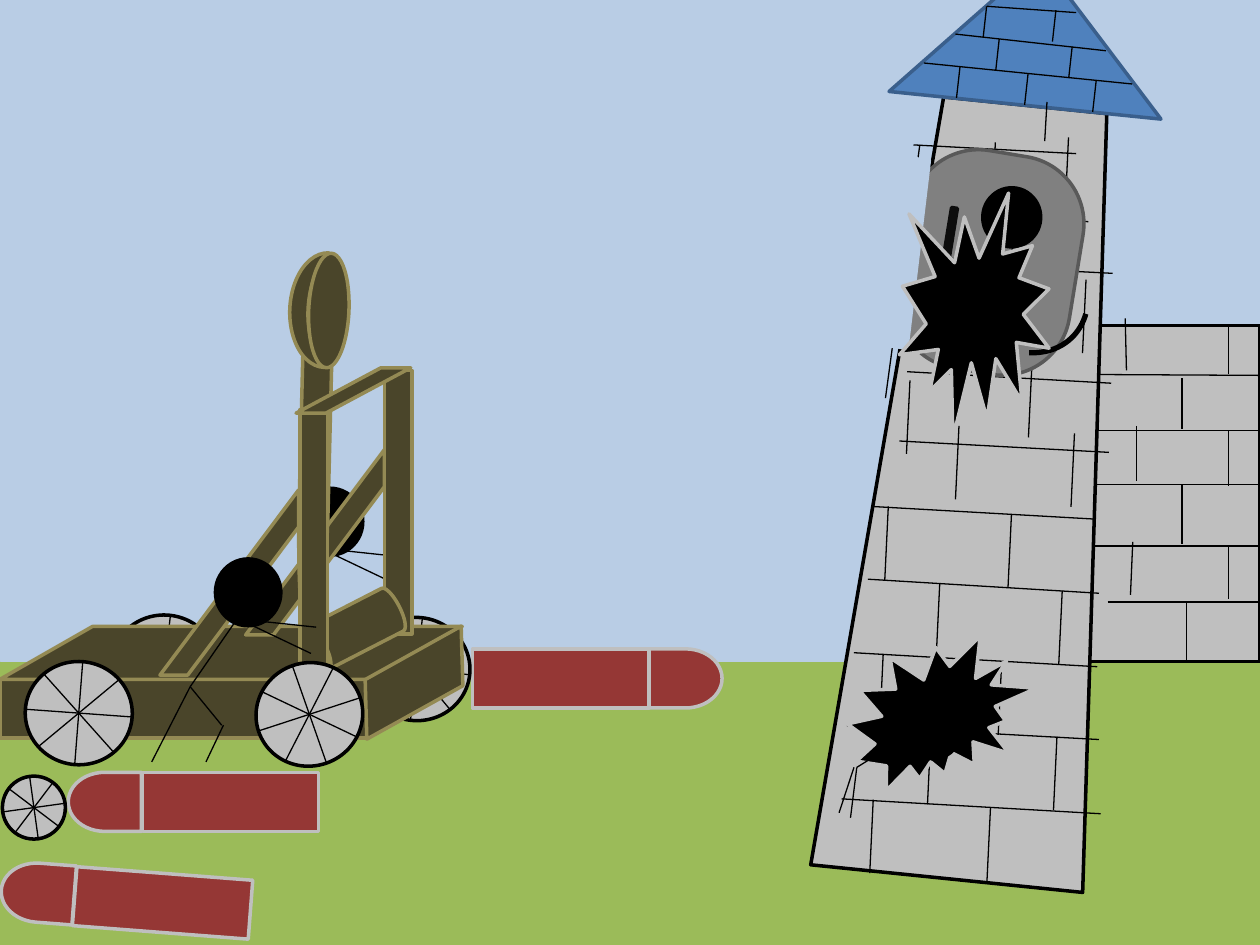
"""Build a slide with a catapult, its crew and rockets, and a damaged tower."""
import math

from lxml import etree
from pptx import Presentation
from pptx.dml.color import RGBColor
from pptx.enum import shapes
from pptx.oxml import ns
from pptx.util import Pt

KIND = shapes.MSO_SHAPE
BLACK = RGBColor(0x00, 0x00, 0x00)
STONE_GREY = RGBColor(0xBF, 0xBF, 0xBF)
GRASS_GREEN = RGBColor(0x9B, 0xBB, 0x59)
SKY_BLUE = RGBColor(0xB9, 0xCD, 0xE5)
RED = RGBColor(0x95, 0x37, 0x35)
BROWN = RGBColor(0x4A, 0x45, 0x2A)
TAN = RGBColor(0x94, 0x8A, 0x54)
ROOF_BLUE = RGBColor(0x4F, 0x81, 0xBD)
ROOF_EDGE = RGBColor(0x3A, 0x5F, 0x8C)
WINDOW_GREY = RGBColor(0x80, 0x80, 0x80)
WINDOW_EDGE = RGBColor(0x59, 0x59, 0x59)
BAR_BLACK = RGBColor(0x0D, 0x0D, 0x0D)

GRASS = (GRASS_GREEN, GRASS_GREEN)
SKY = (SKY_BLUE, SKY_BLUE)
STONE = (STONE_GREY, BLACK)
ROCKET = (RED, STONE_GREY)
WOOD = (BROWN, TAN)
INK = (BLACK, BLACK)
HOLE = (BLACK, STONE_GREY)

deck = Presentation()
deck.slide_width, deck.slide_height = Pt(720), Pt(540)
page = deck.slides.add_slide(deck.slide_layouts[6])


def add_part(kind, left, top, width, height, style, turn=0, adjust=(), weight=2):
    part = page.shapes.add_shape(kind, Pt(left), Pt(top), Pt(width), Pt(height))
    part.shadow.inherit = False
    part.rotation = turn
    for index, value in enumerate(adjust):
        part.adjustments[index] = value
    fill, edge = style
    if fill is None:
        part.fill.background()
    else:
        part.fill.solid()
        part.fill.fore_color.rgb = fill
    part.line.color.rgb = edge
    part.line.width = Pt(weight)


def add_lines(lines, dx=0, dy=0):
    for x1, y1, x2, y2 in lines:
        line = page.shapes.add_connector(
            shapes.MSO_CONNECTOR.STRAIGHT,
            Pt(x1 + dx), Pt(y1 + dy), Pt(x2 + dx), Pt(y2 + dy))
        line.line.color.rgb = BLACK
        line.line.width = Pt(0.75)
        etree.SubElement(line._element.spPr, ns.qn("a:effectLst"))


add_part(KIND.RECTANGLE, 0, 378, 720, 162, GRASS)
add_part(KIND.RECTANGLE, 0.7, -0.7, 720, 378, SKY)

add_part(KIND.FLOWCHART_PROCESS, 576, 186, 144, 192, STONE)
add_lines([
    (623, 214, 720, 214.5), (623, 246, 720, 246), (626, 277, 721, 277),
    (626, 312, 720, 312), (633, 344, 721, 344)])
add_lines([(x, top, x, bottom) for x, top, bottom in [
    (678, 344, 378), (702, 312, 342), (675.5, 277, 311),
    (702, 246, 278), (675.5, 216, 245), (702, 186, 214)]])

for nose_x, nose_y, body_x, body_y, turn in [
        (39, 441.3, 81.3, 441.3, 180),
        (0.7, 493.2, 42.5, 499, 184.4),
        (370.8, 370.8, 270, 370.8, 0)]:
    add_part(KIND.FLOWCHART_DELAY, nose_x, nose_y, 41.8, 33.8, ROCKET, turn)
    add_part(KIND.RECTANGLE, body_x, body_y, 100.8, 33.8, ROCKET, turn)

LIMBS = [
    (0, 0, -22, 43), (0, 0, 18, 22), (19, 22, 9, 43),
    (0, 0, 27, -39), (27, -39, 69, -19), (25, -39, 72, -34)]
back_wheels = [
    (1.4, 443.5, 36, 36, 352.1),
    (207.4, 352.8, 61.2, 59, 186.4),
    (63.4, 351.4, 61.2, 59, 186.4)]
front_wheels = [(14.4, 378, 61.2, 59, 184.3), (146.2, 378.7, 61.2, 59, 161.3)]
cart = [
    (KIND.FLOWCHART_PROCESS, 0, 388, 210.2, 33.8, WOOD),
    (KIND.FLOWCHART_DATA, 0, 358, 264.2, 30.2, WOOD),
    (KIND.FLOWCHART_DATA, 197.3, 375, 78.5, 30.2, WOOD, 150.9),
    (KIND.DIAGONAL_STRIPE, 140.4, 257, 79.2, 105.8, WOOD, 180, [0.8]),
    (KIND.FLOWCHART_PROCESS, 219.6, 211.7, 15.8, 150.5, WOOD),
    (KIND.FLOWCHART_DELAY, 95, 279.4, 168.5, 16.6, WOOD, 91.4),
    (KIND.MOON, 165.6, 144, 20.9, 65.5, WOOD, 2.5),
    (KIND.OVAL, 176.4, 144.7, 23, 65.5, WOOD, 2.5),
    (KIND.CAN, 189.4, 331.2, 27.4, 56.2, WOOD, 242.8, [0.31]),
    (KIND.DIAGONAL_STRIPE, 91.4, 280, 79.2, 105.8, WOOD, 180, [0.8]),
    (KIND.FLOWCHART_PROCESS, 171.4, 234, 15.8, 150.5, WOOD)]
crossbar = [(KIND.PARALLELOGRAM, 169.2, 210.2, 65.5, 25.9, WOOD, 0, [1.87])]

for hip_x, hip_y, wheels, timbers in [
        (155.5, 352, back_wheels, cart),
        (108.7, 392.4, front_wheels, crossbar)]:
    add_lines(LIMBS, hip_x, hip_y)
    add_part(KIND.OVAL, hip_x + 14.4, hip_y - 73, 37.4, 38.2, INK)
    for left, top, width, height, turn in wheels:
        add_part(KIND.OVAL, left, top, width, height, STONE, turn)
        spokes = []
        for step in range(4):
            angle = math.radians(turn + 45 * step)
            x, y = width / 2 * math.cos(angle), height / 2 * math.sin(angle)
            spokes.append((-x, -y, x, y))
        add_lines(spokes, left + width / 2, top + height / 2)
    for timber in timbers:
        add_part(*timber)

add_part(KIND.FLOWCHART_MANUAL_OPERATION, 485.3, 59, 156.2, 444.2, STONE, 185.8)
add_part(KIND.FLOWCHART_EXTRACT, 511.9, -23.8, 156.2, 84.2, (ROOF_BLUE, ROOF_EDGE), 5.8)
add_lines([(528, 36, 647, 48), (546, 19.5, 632, 29), (564, 3.6, 615, 7.2)])
add_lines([(x, y, x - 2, y + 18) for x, y in [
    (548.6, 38), (587.5, 42), (626.4, 46), (571, 22.3),
    (612.7, 26.6), (563.8, 3.6), (603.4, 5.8)]])

add_part(KIND.RECTANGLE, 492.5, 82, 23.8, 144, SKY, 7.3)
add_lines([
    (481, 456.5, 629, 465), (484, 414.7, 628, 422.6), (488, 373, 627, 381),
    (496, 331, 628, 339), (498, 289.4, 625, 296.6), (514, 252, 633.6, 258.5),
    (518.4, 212.4, 635, 219), (524, 150.5, 635.8, 156.2),
    (529, 121.7, 622, 126.7), (522, 82.8, 615, 87.8),
    (506, 227.5, 525.6, 82.8), (598.3, 58.3, 597, 80.6)])
add_lines([(x, y, x - 2, y + 42) for x, y in [
    (499, 457), (566, 461.5), (604, 421), (572.4, 378), (607, 337.7),
    (578, 293.8), (614, 247.7), (589.7, 208), (620.6, 159.8), (586.8, 126),
    (610.6, 78.5), (532, 417.6), (504.7, 373.7), (537, 333.4),
    (507.6, 289.4), (548, 243.4), (520, 217.4), (568.8, 81.4)]])

add_part(KIND.ROUNDED_RECTANGLE, 516.2, 87, 99.4, 126,
         (WINDOW_GREY, WINDOW_EDGE), 9.3, [0.39])
add_part(KIND.MATH_PLUS, 530, 107.3, 20.9, 84.2, (BAR_BLACK, BAR_BLACK), 9.3, [0.16])
add_lines([
    (556.6, 203, 571.7, 175), (580.3, 206.6, 573.8, 175), (573, 174.2, 579, 139),
    (647.3, 309.6, 646, 340), (649.4, 243.4, 649.4, 275), (643, 182, 643.7, 211.7),
    (545, 160.6, 570.2, 144.7), (571.7, 143.3, 581.8, 164.2)])
add_part(KIND.FLOWCHART_CONNECTOR, 561.6, 107.3, 33.1, 33.8, INK, 3.2)
add_part(KIND.RECTANGLE, 491, 89.3, 33.8, 108, SKY, 6.8)
add_part(KIND.ARC, 538.6, 126, 87.1, 71.3, (None, BLACK), 226, [95.28, 129.35], 3)
add_lines([(555, 161.3, 581.8, 164.2)])
add_part(KIND.EXPLOSION2, 484.6, 362.2, 106.6, 91.4, HOLE, 3.2)
add_lines([(551.5, 131, 555, 161.3), (555.8, 157, 559.4, 188.6)])
add_part(KIND.OVAL, 513.4, 398.2, 37.4, 33.8, INK, 66.9)
add_lines([
    (516.2, 422, 489.6, 438.5), (488, 438.5, 479.5, 464.4),
    (489.6, 438.5, 486, 467.3)])
add_part(KIND.EXPLOSION1, 514.8, 109.4, 85.7, 141.8, HOLE, 3.2)

deck.save("out.pptx")
